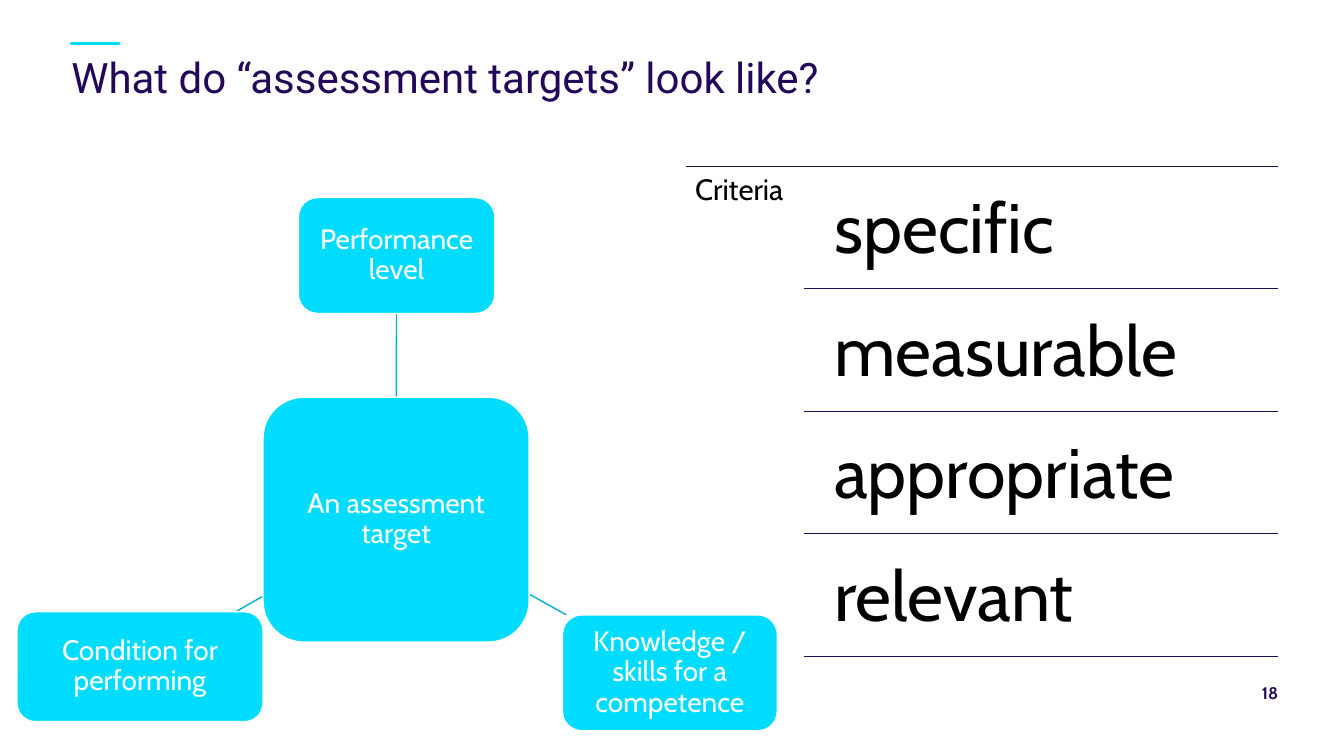
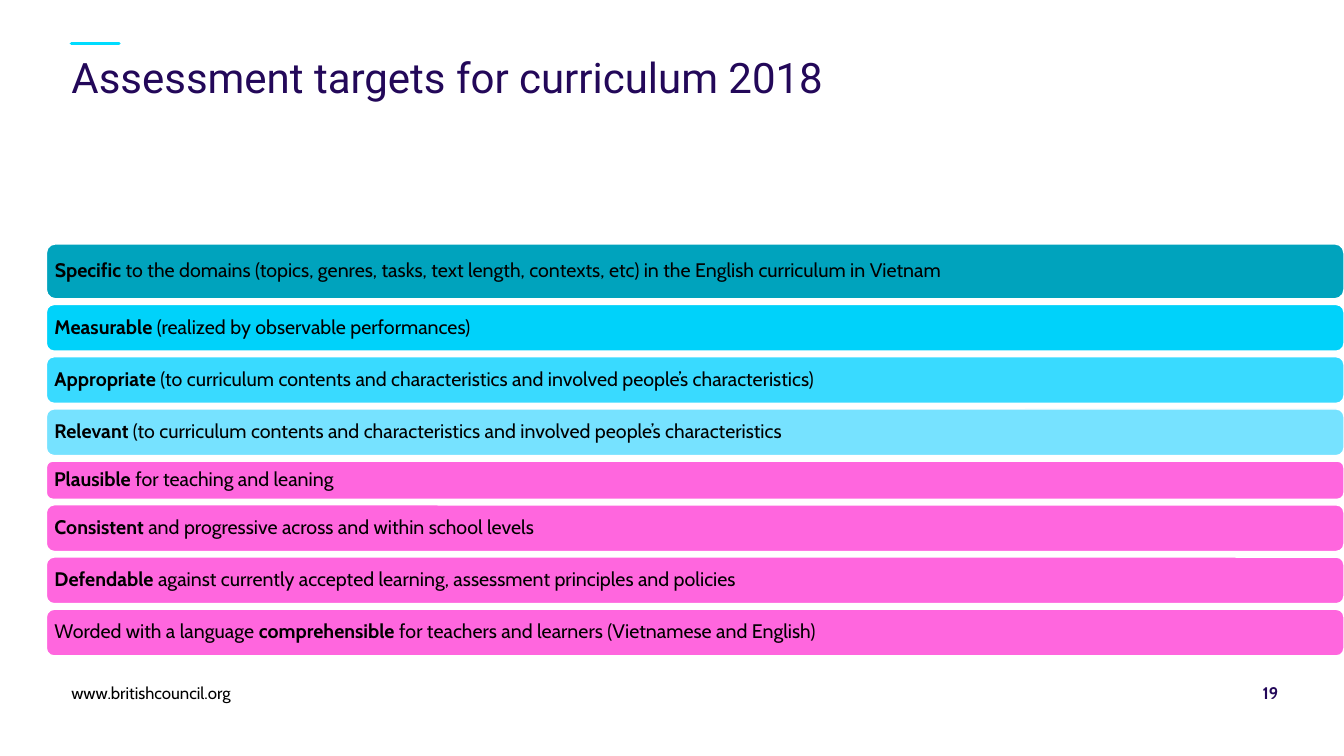
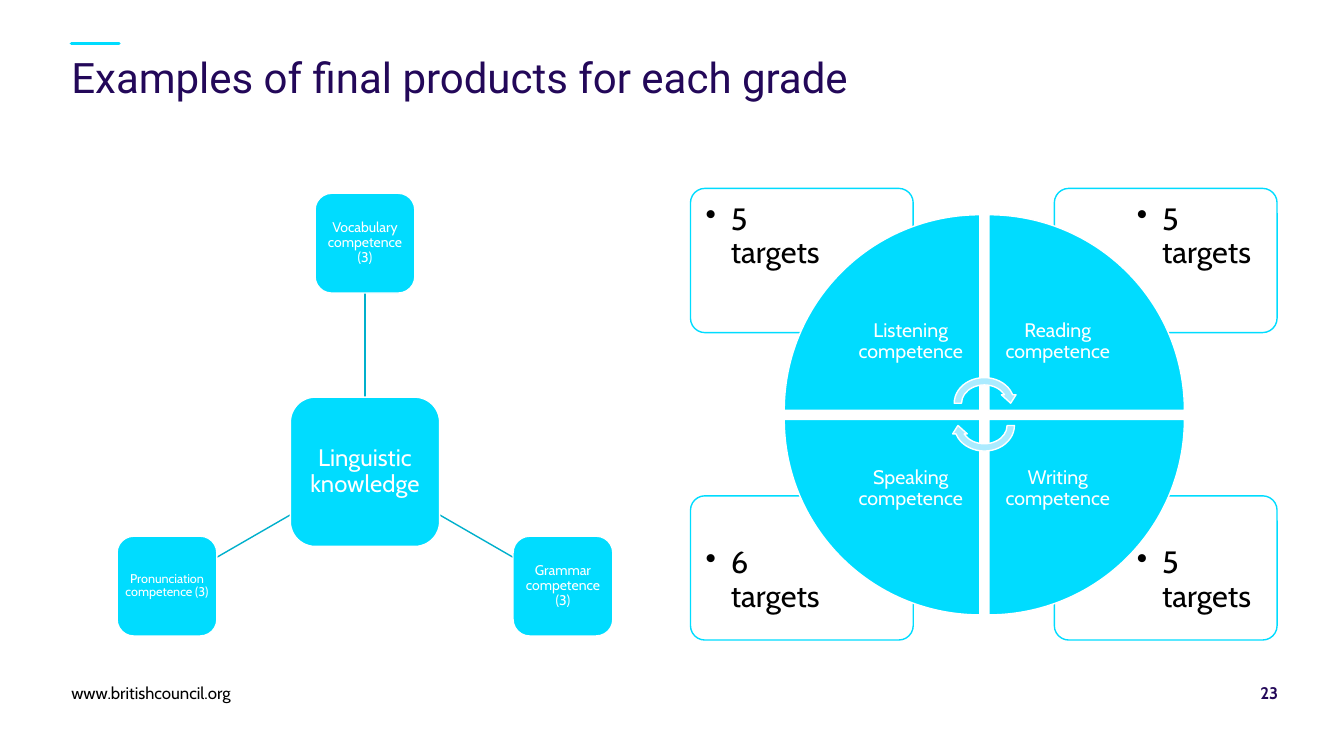
from dataclasses import dataclass
from math import cos, radians, sin
from typing import Any

from lxml import etree
from pptx import Presentation
from pptx.dml.color import RGBColor
from pptx.enum import shapes, text
from pptx.oxml import ns
from pptx.util import Pt

COLORS = {
    "navy": "230859", "ink": "200751", "cyan": "00DCFF", "spoke": "00B0CC",
    "white": "FFFFFF", "black": "000000", "pink": "FF66DE", "pale": "ABEBFF",
    "teal": "00A3BD", "cyan2": "00D2FA", "cyan3": "39DAFF", "cyan4": "76E2FF",
}
BODY, HEAD = "Cabin", "Roboto"
SHAPE, ALIGN, ANCHOR = shapes.MSO_SHAPE, text.PP_ALIGN, text.MSO_ANCHOR
WEBSITE = "www.britishcouncil.org"


@dataclass
class Box:
    x: float
    y: float
    w: float
    h: float

    @property
    def center(self) -> tuple[float, float]:
        return self.x + self.w / 2, self.y + self.h / 2

    def edge_towards(self, other: "Box") -> tuple[float, float]:
        """Point where the line to the other centre leaves this box."""
        (cx, cy), (ox, oy) = self.center, other.center
        dx, dy = ox - cx, oy - cy
        scale = 2 * max(abs(dx) / self.w, abs(dy) / self.h)
        return cx + dx / scale, cy + dy / scale


@dataclass
class Node:
    label: str
    box: Box
    size: float
    inset: float


@dataclass
class Bar:
    runs: list[tuple[str, bool]]
    color: str
    height: float = 33.3


@dataclass
class Skill:
    name: str
    targets: str
    col: int
    row: int
    turn: int


def rgb(name: str) -> RGBColor:
    return RGBColor.from_string(COLORS[name])


def write(sp: Any, runs: list[tuple[str, bool]], size: float, color: str = "black",
          align: Any = ALIGN.LEFT, anchor: Any = ANCHOR.TOP, inset: float = 0,
          spacing: Any = 0.9, font: str = BODY, bullet: bool = False) -> None:
    tf = sp.text_frame
    frame = {"word_wrap": True, "vertical_anchor": anchor}
    frame |= {f"margin_{side}": Pt(inset) for side in ("left", "top", "right", "bottom")}
    for key, value in frame.items():
        setattr(tf, key, value)
    p = tf.paragraphs[0]
    if bullet:
        pPr = p._p.get_or_add_pPr()
        pPr.set("marL", str(Pt(18)))
        pPr.set("indent", str(-Pt(18)))
        etree.SubElement(pPr, ns.qn("a:buChar")).set("char", "•")
    p.alignment, p.line_spacing = align, spacing
    for content, bold in runs:
        r = p.add_run()
        r.text = content
        for key, value in {"name": font, "size": Pt(size), "bold": bold}.items():
            setattr(r.font, key, value)
        r.font.color.rgb = rgb(color)


def add_text(s: Any, box: Box, content: str, size: float, bold: bool = False,
             **fmt: Any) -> None:
    sp = s.shapes.add_textbox(Pt(box.x), Pt(box.y), Pt(box.w), Pt(box.h))
    write(sp, [(content, bold)], size, **fmt)


def add_shape(s: Any, kind: Any, box: Box, fill: str, line: str = "white",
              turn: int = 0) -> Any:
    sp = s.shapes.add_shape(kind, Pt(box.x), Pt(box.y), Pt(box.w), Pt(box.h))
    sp.shadow.inherit = False
    sp.fill.solid()
    sp.fill.fore_color.rgb = rgb(fill)
    sp.line.color.rgb = rgb(line)
    sp.line.width = Pt(1)
    sp.rotation = turn
    return sp


def add_line(s: Any, start: tuple[float, float], end: tuple[float, float], color: str,
             width: float = 1, cap: str = "flat") -> None:
    line = s.shapes.add_connector(shapes.MSO_CONNECTOR.STRAIGHT,
                                  *(Pt(v) for v in (*start, *end)))
    line.line.color.rgb = rgb(color)
    line.line.width = Pt(width)
    spPr = line._element.spPr
    spPr.find(ns.qn("a:ln")).set("cap", cap)
    etree.SubElement(spPr, ns.qn("a:effectLst"))


def add_slide(prs: Any, title: str, number: int, footer: str = "") -> Any:
    s = prs.slides.add_slide(prs.slide_layouts[6])
    add_line(s, (51, 31), (85, 31), "cyan", 2.4, "rnd")
    add_text(s, Box(51, 39.6, 862, 62.6), title, 30, color="navy", font=HEAD,
             spacing=Pt(33))
    if footer:
        add_text(s, Box(51, 487.4, 822, 14.4), footer, 12, anchor=ANCHOR.BOTTOM,
                 spacing=1.0)
    add_text(s, Box(873.4, 487.4, 39.6, 14.4), str(number), 12, True, color="navy",
             align=ALIGN.RIGHT, anchor=ANCHOR.BOTTOM, spacing=1.0)
    return s


def add_hub(s: Any, hub: Node, satellites: list[Node]) -> None:
    for node in satellites:
        add_line(s, hub.box.edge_towards(node.box), node.box.edge_towards(hub.box), "spoke")
    for node in [hub, *satellites]:
        sp = add_shape(s, SHAPE.ROUNDED_RECTANGLE, node.box, "cyan")
        write(sp, [(node.label, False)], node.size, "white", ALIGN.CENTER,
              ANCHOR.MIDDLE, node.inset)


def build_targets(prs: Any) -> None:
    s = add_slide(prs, "What do “assessment targets” look like?", 18)
    add_hub(s, Node("An assessment target", Box(187.9, 283.7, 190.1, 175), 20, 4.2), [
        Node("Performance level", Box(213.1, 141.1, 140.4, 82.8), 20, 4.2),
        Node("Knowledge / skills for a competence", Box(401.8, 439.2, 153.4, 82.8), 20, 4.2),
        Node("Condition for performing", Box(12.2, 437, 175.7, 78.5), 20, 4.2),
    ])
    # Criteria list
    top, pitch, right = 118.8, 87.5, 913
    add_line(s, (490.3, top), (right, top), "ink")
    add_text(s, Box(490.3, top, 84.2, 354), "Criteria", 21, inset=6.3)
    for i, word in enumerate(["specific", "measurable", "appropriate", "relevant"]):
        y = top + i * pitch
        add_text(s, Box(581, y + 4.4, 332, 83.5), word, 50, inset=15)
        add_line(s, (574.6, y + pitch), (right, y + pitch), "navy")


def build_curriculum(prs: Any) -> None:
    s = add_slide(prs, "Assessment targets for curriculum 2018", 19, WEBSITE)
    people = " (to curriculum contents and characteristics and involved people’s characteristics"
    bars = [
        Bar([("Specific", True), (" to the domains (topics, genres, tasks, text length, "
             "contexts, etc) in the English curriculum in Vietnam", False)], "teal", 39.3),
        Bar([("Measurable", True), (" (realized by observable performances)", False)], "cyan2"),
        Bar([("Appropriate", True), (people + ")", False)], "cyan3"),
        Bar([("Relevant", True), (people, False)], "cyan4"),
        Bar([("Plausible", True), (" for teaching and leaning", False)], "pink", 27.2),
        Bar([("Consistent", True),
             (" and progressive across and within school levels", False)], "pink"),
        Bar([("Defendable ", True), ("against currently accepted learning, assessment "
             "principles and policies", False)], "pink"),
        Bar([("Worded with a language ", False), ("comprehensible ", True),
             ("for teachers and learners (Vietnamese and English)", False)], "pink"),
    ]
    y, gap = 174.2, 4
    for bar in bars:
        sp = add_shape(s, SHAPE.ROUNDED_RECTANGLE, Box(33.1, y, 926.9, bar.height), bar.color)
        write(sp, bar.runs, 14, anchor=ANCHOR.MIDDLE, inset=4.2)
        y += bar.height + gap


def build_products(prs: Any) -> None:
    s = add_slide(prs, "Examples of final products for each grade", 23, WEBSITE)
    # Linguistic knowledge with satellites on a circle
    hub = Node("Linguistic knowledge", Box(207.4, 283.7, 106.6, 106.6), 17, 3.4)
    (cx, cy), radius, side = hub.box.center, 163.3, 71.3
    satellites = []
    for label, angle, size in [("Vocabulary competence (3)", 270, 10),
                               ("Grammar competence (3)", 30, 10),
                               ("Pronunciation competence (3)", 150, 9)]:
        x = cx + radius * cos(radians(angle)) - side / 2
        y = cy + radius * sin(radians(angle)) - side / 2
        satellites.append(Node(label, Box(x, y, side, side), size, 2))
    add_hub(s, hub, satellites)

    # Four skills: cards behind, wedges in front
    skills = [
        Skill("Listening competence", "5 targets", 0, 0, 0),
        Skill("Reading competence", "5 targets", 1, 0, 90),
        Skill("Writing competence", "5 targets", 1, 1, 180),
        Skill("Speaking competence", "6 targets", 0, 1, 270),
    ]
    for k in skills:
        card = Box(493.2 + k.col * 259.9, 134.6 + k.row * 219.6, 159.1, 103)
        sp = add_shape(s, SHAPE.ROUNDED_RECTANGLE, card, "white", "cyan")
        sp.adjustments[0] = 0.1
        add_text(s, Box(495.4 + k.col * 308.1, 136.8 + k.row * 245.5, 107.3, 72.7),
                 k.targets, 22, inset=8.6, bullet=True)
    wedge, label_side, pitch = 139.7, 98.6, 146.1
    for k in skills:
        x, y = 560.2 + k.col * pitch, 153.4 + k.row * pitch
        add_shape(s, SHAPE.PIE_WEDGE, Box(x, y, wedge, wedge), "cyan", turn=k.turn)
        shift = wedge - label_side
        add_text(s, Box(x + shift * (1 - k.col), y + shift * (1 - k.row),
                        label_side, label_side), k.name, 14, color="white",
                 align=ALIGN.CENTER, anchor=ANCHOR.MIDDLE, inset=7.9)
    for y, turn in [(267.1, 0), (283, 180)]:
        add_shape(s, SHAPE.CIRCULAR_ARROW, Box(679, y, 48.2, 41.8), "pale", turn=turn)


def main() -> None:
    prs = Presentation()
    prs.slide_width, prs.slide_height = Pt(960), Pt(540)
    for build in (build_targets, build_curriculum, build_products):
        build(prs)
    prs.save("out.pptx")


if __name__ == "__main__":
    main()
